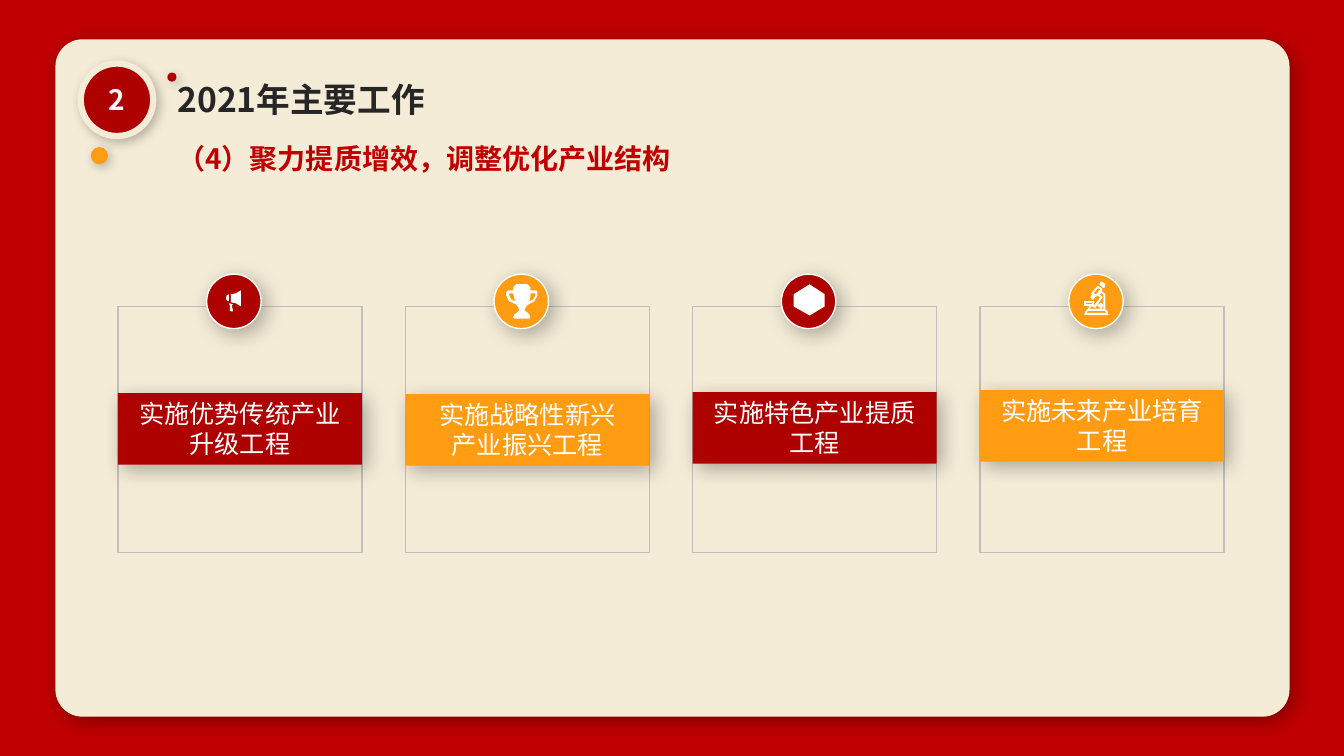
"""Build the slide of four industry projects."""
from dataclasses import dataclass

from lxml import etree
from pptx import Presentation
from pptx import util as u
from pptx.dml.color import RGBColor
from pptx.enum import shapes, text
from pptx.oxml import ns

KIND = shapes.MSO_SHAPE
LEFT, MID = text.PP_ALIGN.LEFT, text.PP_ALIGN.CENTER
TOP, CORE = text.MSO_ANCHOR.TOP, text.MSO_ANCHOR.MIDDLE
GROW, FIXED = text.MSO_AUTO_SIZE.SHAPE_TO_FIT_TEXT, text.MSO_AUTO_SIZE.NONE


@dataclass(frozen=True)
class Theme:
    """Hold the colours, type sizes and shadows."""
    font: str = "Noto Sans CJK SC"
    back: str = "C00000"
    cream: str = "F4ECD7"
    red: str = "AE0201"
    gold: str = "FF9C11"
    dark: str = "262626"
    grey: str = "BFBFBF"
    white: str = "FFFFFF"
    head: int = 24
    sub: int = 20
    label: int = 18
    deep: tuple = (30, 15, 5)
    soft: tuple = (25, 8, 3)


HORN = [
    [[(22, 29), (23, 31), (23, 36), (24, 37), (26, 37), (26, 36), (25, 31),
      (26, 30), (23, 29)]],
    [[(24, 28), (29, 29), (34, 32), (34, 16), (29, 19), (24, 20)]],
    [[(22, 27), (22, 20), (20, 21), (19, 24), (20, 26)]],
]
CUP = [[
    [(43, 21), (40, 27), (34, 30), (32, 32), (30, 36), (33, 38), (35, 40),
     (36, 43), (35, 44), (20, 44), (19, 43), (20, 40), (23, 38), (25, 36),
     (24, 33), (22, 30), (15, 27), (12, 21), (12, 18), (14, 16), (19, 16),
     (19, 13), (22, 10), (33, 10), (36, 13), (36, 16), (42, 16), (43, 18)],
    [(19, 19), (15, 19), (15, 21), (17, 25), (21, 27), (20, 24)],
    [(41, 19), (36, 19), (36, 23), (35, 27), (39, 25), (41, 21)],
]]
HEX = [[[(28, 10), (43, 20), (43, 32), (28, 41), (12, 32), (12, 20)]]]
SCOPE = [[
    [(16, 40), (17, 37), (19, 35), (36, 35), (38, 37), (39, 40)],
    [(17, 39), (38, 39), (38, 38), (36, 36), (19, 36), (17, 38)],
    [(19, 36), (22, 30), (25, 32), (32, 23), (28, 20), (30, 19), (32, 17),
     (36, 20), (36, 36)],
    [(20, 35), (35, 35), (35, 20), (32, 18), (30, 20), (33, 23), (26, 33),
     (22, 31)],
    [(27, 22), (23, 19), (29, 12), (33, 15), (31, 18)],
    [(24, 19), (27, 21), (32, 15), (29, 13)],
    [(24, 25), (22, 23), (24, 19), (27, 21)],
    [(34, 13), (31, 10), (32, 8), (33, 8), (36, 10), (35, 13)],
    [(16, 31), (16, 27), (25, 27), (25, 31)],
    [(17, 30), (24, 30), (24, 28), (17, 28)],
    [(32, 34), (29, 31), (32, 29), (34, 31)],
]]


class Deck:
    """Draw styled elements on the current slide."""

    def __init__(self, theme):
        """Open a wide deck with one titled slide."""
        self.theme = theme
        self.show = Presentation()
        self.show.slide_width, self.show.slide_height = u.Inches(13.33), u.Inches(7.5)
        self.slide = self.show.slides.add_slide(self.show.slide_layouts[5])
        self.pen = self.slide.shapes

    def group(self):
        """Draw what follows in a new group."""
        self.pen = self.slide.shapes.add_group_shape().shapes

    def paint(self, shape, fill=None, line=None, shade=None):
        """Set fill, line and shadow."""
        shape.shadow.inherit = False
        if fill:
            shape.fill.solid()
            shape.fill.fore_color.rgb = RGBColor.from_string(fill)
        else:
            shape.fill.background()
        if line:
            shape.line.color.rgb = RGBColor.from_string(line[0])
            shape.line.width = u.Pt(line[1])
        else:
            shape.line.fill.background()
        if shade:
            self.shade(shape, *shade)
        return shape

    def shade(self, shape, alpha, blur, dist):
        """Cast a black shadow down to the right."""
        box = shape._element.spPr.find(ns.qn("a:effectLst"))
        cast = etree.SubElement(
            box, ns.qn("a:outerShdw"), blurRad=str(u.Pt(blur)),
            dist=str(u.Pt(dist)), dir="2700000", algn="tl", rotWithShape="0")
        tint = etree.SubElement(cast, ns.qn("a:srgbClr"), val="000000")
        etree.SubElement(tint, ns.qn("a:alpha"), val=str(alpha * 1000))

    def block(self, kind, at, **look):
        """Add a preset shape."""
        return self.paint(self.pen.add_shape(kind, *map(u.Inches, at)), **look)

    def icon(self, parts, left, top, line=None):
        """Add outlines given in hundredths of an inch."""
        for rings in parts:
            pen = self.pen.build_freeform(*rings[0][0], scale=u.Inches(0.01))
            for ring in rings:
                pen.move_to(*ring[0])
                pen.add_line_segments(ring[1:], close=True)
            form = pen.convert_to_shape(u.Inches(left), u.Inches(top))
            self.paint(form, self.theme.white, line)

    def label(self, shape, lines, size, color, bold=False, align=LEFT, **frame):
        """Fill a shape with styled paragraphs."""
        body = shape.text_frame
        body.text = "\n".join(lines)
        form = {"word_wrap": True, "vertical_anchor": TOP, "auto_size": GROW}
        for key, val in {**form, **frame}.items():
            setattr(body, key, val)
        face = {"size": u.Pt(size), "bold": bold, "name": self.theme.font}
        for para in body.paragraphs:
            para.alignment = align
            for run in para.runs:
                for key, val in face.items():
                    setattr(run.font, key, val)
                run.font.color.rgb = RGBColor.from_string(color)
                etree.SubElement(run._r.get_or_add_rPr(), ns.qn("a:ea"),
                                 typeface=self.theme.font)

    def title(self, at, line, *look):
        """Move the title placeholder to the front and fill it."""
        head = self.slide.shapes.title
        for key, val in zip(("left", "top", "width", "height"), at):
            setattr(head, key, u.Inches(val))
        self.slide.shapes._spTree.append(head._element)
        self.label(head, [line], *look)

    def note(self, at, line, *look):
        """Add a text box."""
        self.label(self.pen.add_textbox(*map(u.Inches, at)), [line], *look)

    def card(self, left, top, lines, color, icon, edge=None):
        """Add a framed project with its icon and ribbon."""
        th = self.theme
        self.group()
        self.block(KIND.RECTANGLE, (left, 3.04, 2.42, 2.44), line=(th.grey, 1))
        self.block(KIND.OVAL, (left + 0.88, 2.72, 0.54, 0.54), fill=color,
                   line=(th.white, 1), shade=th.deep)
        band = self.block(KIND.RECTANGLE, (left, top, 2.42, 0.71), fill=color,
                          shade=th.deep)
        self.label(band, lines, th.label, th.white, align=MID)
        self.icon(icon, left + 0.88, 2.72, edge)


def main():
    """Draw the slide and save it."""
    th = Theme()
    deck = Deck(th)
    deck.block(KIND.RECTANGLE, (0, 0, 13.33, 7.5), fill=th.back)
    panel = deck.block(KIND.ROUNDED_RECTANGLE, (0.55, 0.39, 12.24, 6.72),
                       fill=th.cream, shade=th.deep)
    panel.adjustments[0] = 0.04
    for left, top, size, color in ((0.9, 1.46, 0.17, th.gold), (1.66, 0.72, 0.09, th.red)):
        deck.block(KIND.OVAL, (left, top, size, size), fill=color, shade=th.soft)
    deck.note((1.66, 1.35, 5.33, 0.44), "（4）聚力提质增效，调整优化产业结构",
              th.sub, th.back, True)
    deck.title((1.66, 0.73, 4.34, 0.5), "2021年主要工作", th.head, th.dark, True)
    badge = deck.block(KIND.OVAL, (0.8, 0.63, 0.72, 0.72), fill=th.red,
                       line=(th.cream, 4.5), shade=th.soft)
    deck.label(badge, ["2"], th.sub, th.white, True, MID, word_wrap=False,
               vertical_anchor=CORE, auto_size=FIXED)
    cards = (
        (3.9, ["实施优势传统产业升级工程"], th.red, HORN),
        (3.91, ["实施战略性新兴", "产业振兴工程"], th.gold, CUP),
        (3.89, ["实施特色产业提质工程"], th.red, HEX),
        (3.87, ["实施未来产业培育工程"], th.gold, SCOPE, (th.white, 0.75)),
    )
    for i, card in enumerate(cards):
        deck.card(1.17 + 2.85 * i, *card)
    deck.show.save("out.pptx")


if __name__ == "__main__":
    main()
